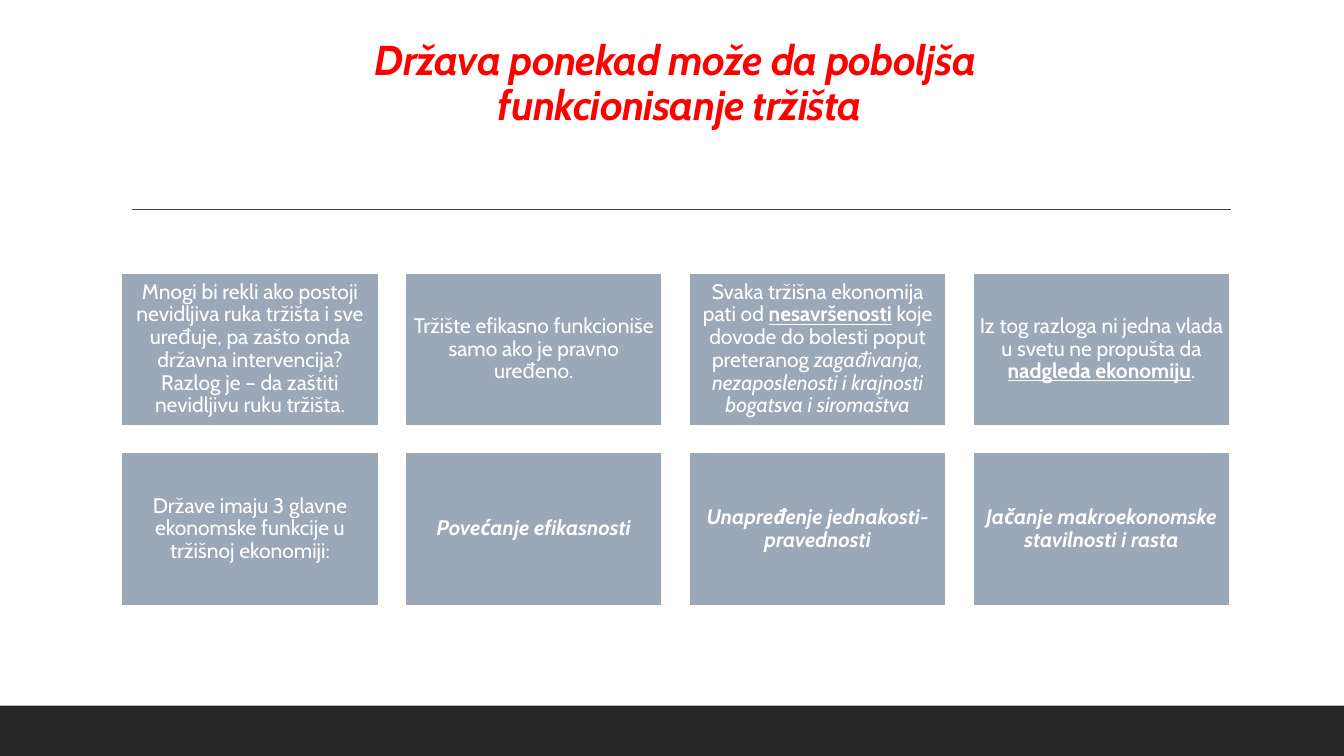
from copy import deepcopy
from dataclasses import dataclass

from lxml import etree
from pptx import Presentation
from pptx.dml.color import RGBColor
from pptx.enum.shapes import MSO_CONNECTOR, MSO_SHAPE
from pptx.enum.text import MSO_ANCHOR, MSO_AUTO_SIZE, PP_ALIGN
from pptx.oxml.ns import qn
from pptx.util import Inches, Pt

RECT, STRAIGHT = MSO_SHAPE.RECTANGLE, MSO_CONNECTOR.STRAIGHT
MIDDLE, BOTTOM = MSO_ANCHOR.MIDDLE, MSO_ANCHOR.BOTTOM
CENTER, NO_FIT = PP_ALIGN.CENTER, MSO_AUTO_SIZE.NONE
TITLE_ONLY = 5


@dataclass(frozen=True)
class Theme:
    font: str = "Cabin"
    title_size: float = 29.7
    card_size: float = 15
    title: str = "FF0000"
    card: str = "9BA8B7"
    white: str = "FFFFFF"
    rule: str = "404040"
    band: str = "262626"


@dataclass(frozen=True)
class Span:
    text: str
    bold: bool = False
    italic: bool = False
    underline: bool = False


@dataclass(frozen=True)
class Grid:
    left: float = 1.2
    top: float = 2.7
    width: float = 2.56
    height: float = 1.53
    gap: float = 0.255
    columns: int = 4


THEME = Theme()
GRID = Grid()
TITLE = Span("Država ponekad može da poboljša\v funkcionisanje tržišta", bold=True, italic=True)
CARDS = [
    [Span("Mnogi bi rekli ako postoji nevidljiva ruka tržišta i sve uređuje, pa zašto onda "
          "državna intervencija? Razlog je – da zaštiti nevidljivu ruku tržišta.")],
    [Span("Tržište efikasno funkcioniše samo ako je pravno uređeno.")],
    [Span("Svaka tržišna ekonomija pati od "),
     Span("nesavršenosti", bold=True, underline=True),
     Span(" koje dovode do bolesti poput preteranog "),
     Span("zagađivanja, nezaposlenosti i krajnosti bogatsva i siromaštva", italic=True)],
    [Span("Iz tog razloga ni jedna vlada u svetu ne propušta da "),
     Span("nadgleda ekonomiju", bold=True, underline=True),
     Span(".")],
    [Span("Države imaju 3 glavne ekonomske funkcije u tržišnoj ekonomiji:")],
    [Span("Povećanje efikasnosti", bold=True, italic=True)],
    [Span("Unapređenje jednakosti-pravednosti", bold=True, italic=True)],
    [Span("Jačanje makroekonomske stavilnosti i rasta", bold=True, italic=True)],
]


def format_run(r, span: Span, size: float, color: str) -> None:
    formats = {"name": THEME.font, "size": Pt(size), "bold": span.bold,
               "italic": span.italic, "underline": span.underline}
    for name, value in formats.items():
        setattr(r.font, name, value)
    r.font.color.rgb = RGBColor.from_string(color)


def format_frame(tf, anchor) -> None:
    formats = {"word_wrap": True, "auto_size": NO_FIT, "vertical_anchor": anchor}
    for name, value in formats.items():
        setattr(tf, name, value)
    tf.paragraphs[0].alignment = CENTER
    tf.paragraphs[0].line_spacing = 0.9


def add_box(slide, left: float, top: float, width: float, height: float, fill: str):
    sp = slide.shapes.add_shape(RECT, Inches(left), Inches(top), Inches(width), Inches(height))
    sp.shadow.inherit = False
    sp.fill.solid()
    sp.fill.fore_color.rgb = RGBColor.from_string(fill)
    sp.line.fill.background()
    return sp


def add_rule(slide, left: float, right: float, y: float) -> None:
    line = slide.shapes.add_connector(STRAIGHT, Inches(left), Inches(y), Inches(right), Inches(y))
    line.line.color.rgb = RGBColor.from_string(THEME.rule)
    line.line.width = Pt(1)
    etree.SubElement(line._element.spPr, qn("a:effectLst"))


def set_title(slide, span: Span) -> None:
    sp = slide.shapes.title
    box = {"left": 1.2, "top": 0.31, "width": 11, "height": 1.02}
    for name, value in box.items():
        setattr(sp, name, Inches(value))
    p = sp.text_frame.paragraphs[0]
    p.text = span.text
    format_frame(sp.text_frame, BOTTOM)
    for r in p.runs:
        format_run(r, span, THEME.title_size, THEME.title)
        r.font._element.set("spc", "-50")
    # Line breaks take the text size too
    for br in p._p.findall(qn("a:br")):
        br.append(deepcopy(p.runs[0].font._element))


def add_card(slide, index: int, spans: list[Span]) -> None:
    row, column = divmod(index, GRID.columns)
    sp = add_box(slide, GRID.left + column * (GRID.width + GRID.gap),
                 GRID.top + row * (GRID.height + GRID.gap), GRID.width, GRID.height, THEME.card)
    sp.line.color.rgb = RGBColor.from_string(THEME.white)
    sp.line.width = Pt(2)
    tf = sp.text_frame
    format_frame(tf, MIDDLE)
    for side in ("left", "right", "top", "bottom"):
        setattr(tf, f"margin_{side}", Inches(0.06))
    for span in spans:
        r = tf.paragraphs[0].add_run()
        r.text = span.text
        format_run(r, span, THEME.card_size, THEME.white)


def main() -> None:
    prs = Presentation()
    prs.slide_width, prs.slide_height = Inches(13.33), Inches(7.5)
    slide = prs.slides.add_slide(prs.slide_layouts[TITLE_ONLY])

    # Bottom band, title and rule
    add_box(slide, 0, 7, 13.33, 0.5, THEME.band)
    add_rule(slide, 1.31, 12.21, 2.08)
    set_title(slide, TITLE)

    # Grid of cards
    for index, spans in enumerate(CARDS):
        add_card(slide, index, spans)

    prs.save("out.pptx")


if __name__ == "__main__":
    main()
